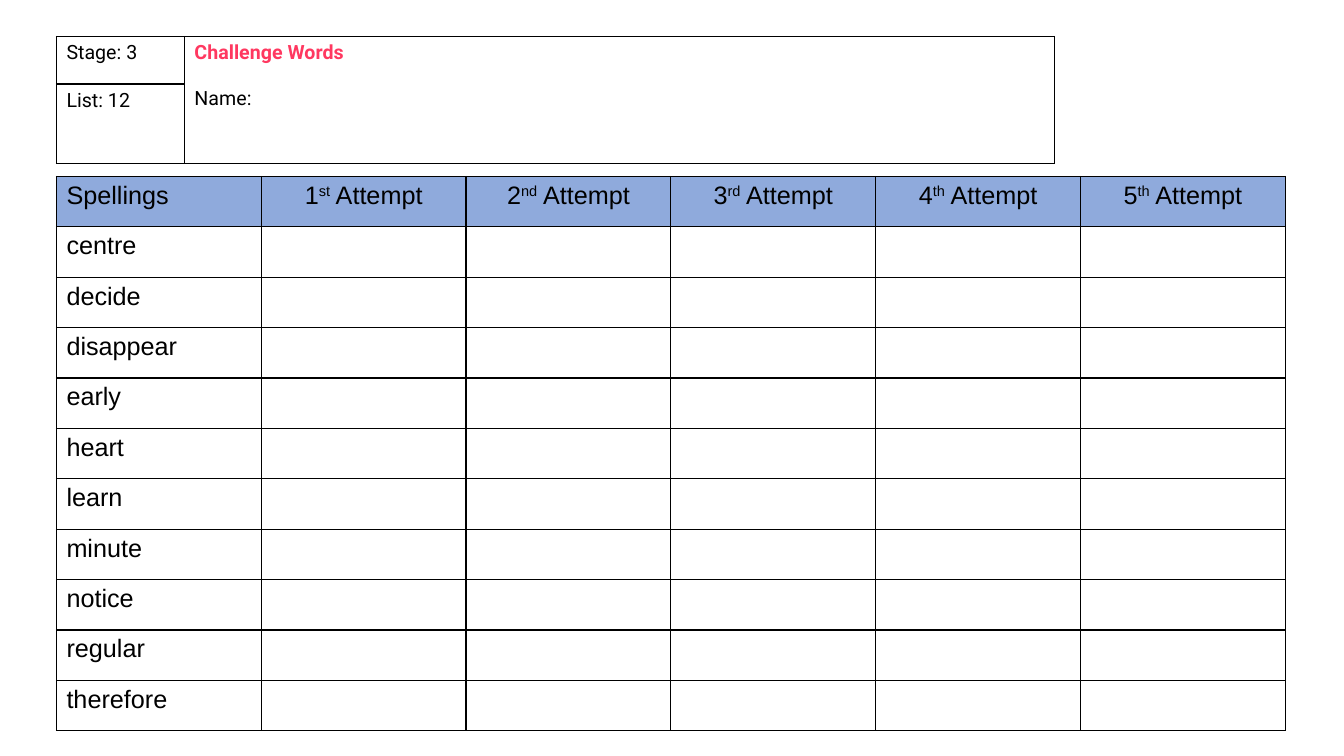
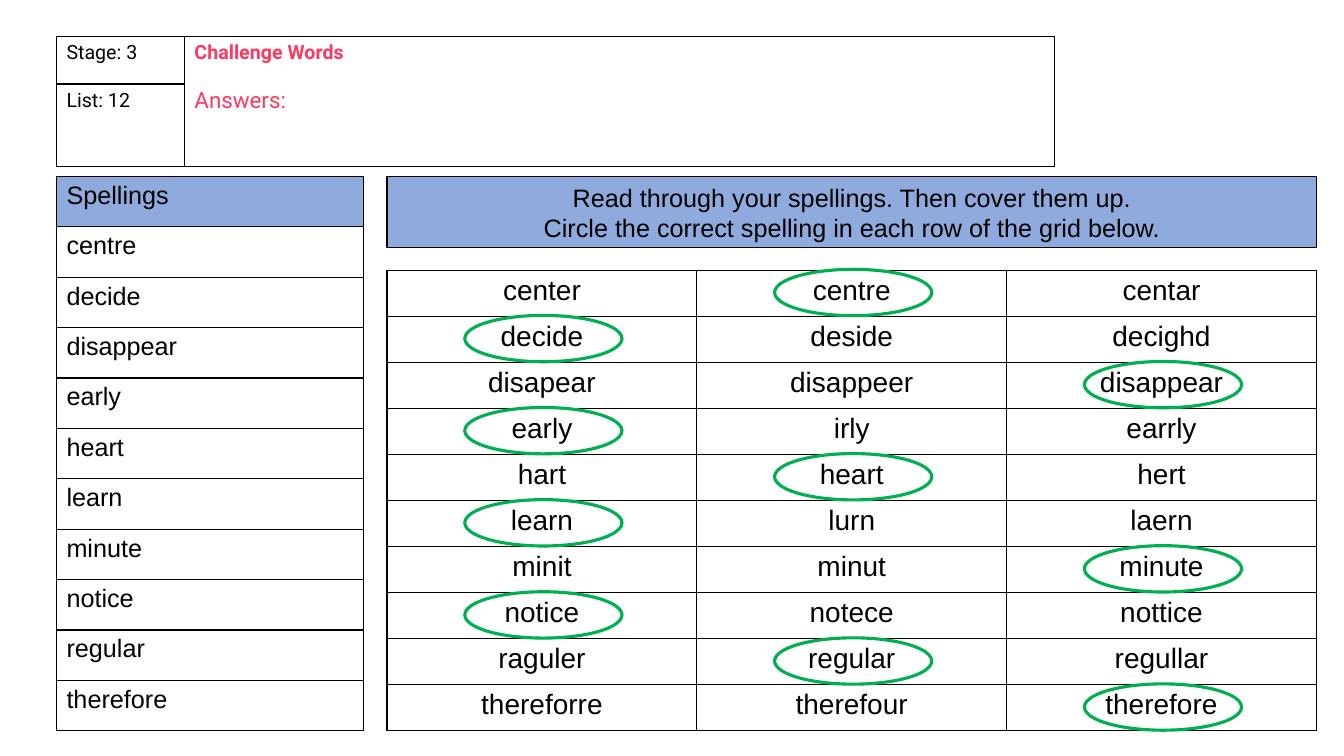
from lxml.etree import SubElement
from pptx import Presentation
from pptx.dml.color import RGBColor
from pptx.enum.shapes import MSO_SHAPE
from pptx.enum.text import MSO_ANCHOR, PP_ALIGN
from pptx.oxml.ns import qn
from pptx.util import Pt

BLACK, BLUE, PINK, GREEN = "000000", "8FAADC", "FF3860", "00B050"
LEFT, HEADER_TOP, BODY_TOP = 40.3, 26, 126
BODY_HEIGHT = 396

SPELLINGS = ["centre", "decide", "disappear", "early", "heart",
             "learn", "minute", "notice", "regular", "therefore"]
ORDINALS = ["st", "nd", "rd", "th", "th"]
CHOICES = [
    ["center", "centre", "centar"],
    ["decide", "deside", "decighd"],
    ["disapear", "disappeer", "disappear"],
    ["early", "irly", "earrly"],
    ["hart", "heart", "hert"],
    ["learn", "lurn", "laern"],
    ["minit", "minut", "minute"],
    ["notice", "notece", "nottice"],
    ["raguler", "regular", "regullar"],
    ["thereforre", "therefour", "therefore"],
]


def rgb(value):
    return RGBColor.from_string(value)


def style(p, size, font="Arial", color=BLACK, bold=False, align=PP_ALIGN.LEFT):
    p.alignment = align
    for f in [p.font] + [r.font for r in p.runs]:
        f.size, f.name, f.bold = Pt(size), font, bold
        f.color.rgb = rgb(color)


def set_borders(cell):
    tcPr = cell._tc.get_or_add_tcPr()
    for side in ("lnL", "lnR", "lnT", "lnB"):
        ln = SubElement(tcPr, qn(f"a:{side}"), w=str(Pt(1)))
        fill = SubElement(ln, qn("a:solidFill"))
        SubElement(fill, qn("a:srgbClr"), val=BLACK)


def add_grid(slide, left, top, widths, heights):
    """Add an unfilled table with thin black borders."""
    table = slide.shapes.add_table(
        len(heights), len(widths), Pt(left), Pt(top),
        Pt(sum(widths)), Pt(sum(heights))).table
    table.first_row = table.horz_banding = False
    for col, width in zip(table.columns, widths):
        col.width = Pt(width)
    for row, height in zip(table.rows, heights):
        row.height = Pt(height)
    for cell in table.iter_cells():
        set_borders(cell)
        cell.fill.background()
        style(cell.text_frame.paragraphs[0], 18)
    return table


def fill_cell(cell, text, size, **options):
    cell.text_frame.text = text
    style(cell.text_frame.paragraphs[0], size, **options)


def add_shape(slide, kind, left, top, width, height, line, weight, fill=None):
    s = slide.shapes.add_shape(kind, Pt(left), Pt(top), Pt(width), Pt(height))
    s.shadow.inherit = False
    if fill:
        s.fill.solid()
        s.fill.fore_color.rgb = rgb(fill)
    else:
        s.fill.background()
    s.line.color.rgb = rgb(line)
    s.line.width = Pt(weight)
    return s


def add_header(slide, left, top, label, label_size, label_color):
    table = add_grid(slide, left, top, [91.4, 621.4], [34, 34])
    title = table.cell(0, 1)
    title.merge(table.cell(1, 1))
    fill_cell(table.cell(0, 0), "Stage: 3", 14, font="Roboto")
    fill_cell(table.cell(1, 0), "List: 12", 14, font="Roboto")
    fill_cell(title, "Challenge Words", 14, font="Roboto", color=PINK, bold=True)
    p = title.text_frame.add_paragraph()
    p.text = label
    p.space_before = Pt(16.4)
    style(p, label_size, "Roboto", label_color)


def add_spellings(slide, left, top, width, height, attempts=()):
    """Add the word list, with an empty column for each attempt."""
    cols, rows = len(attempts) + 1, len(SPELLINGS) + 1
    table = add_grid(slide, left, top, [width / cols] * cols, [height / rows] * rows)
    for row, word in enumerate(["Spellings"] + SPELLINGS):
        fill_cell(table.cell(row, 0), word, 18)
    for number, suffix in enumerate(attempts, 1):
        p = table.cell(0, number).text_frame.paragraphs[0]
        for text in (str(number), suffix, " Attempt"):
            p.add_run().text = text
        style(p, 18, align=PP_ALIGN.CENTER)
        p.runs[1]._r.get_or_add_rPr().set("baseline", "30000")
    for col in range(cols):
        fill = table.cell(0, col).fill
        fill.solid()
        fill.fore_color.rgb = rgb(BLUE)


def add_banner(slide, left, top, width, height):
    s = add_shape(slide, MSO_SHAPE.RECTANGLE, left, top, width, height, BLACK, 1, BLUE)
    tf = s.text_frame
    tf.word_wrap = True
    tf.vertical_anchor = MSO_ANCHOR.MIDDLE
    tf.text = ("Read through your spellings. Then cover them up.\n"
               "Circle the correct spelling in each row of the grid below.")
    for p in tf.paragraphs:
        style(p, 18, align=PP_ALIGN.CENTER)


def add_choices(slide, left, top, width, height):
    """Add the grid of choices and circle each correct spelling."""
    cols, rows = len(CHOICES[0]), len(CHOICES)
    col_w, row_h = width / cols, height / rows
    ring_w, ring_h = 112.3, 33.1
    table = add_grid(slide, left, top, [col_w] * cols, [row_h] * rows)
    for row, words in enumerate(CHOICES):
        for col, word in enumerate(words):
            fill_cell(table.cell(row, col), word, 20, align=PP_ALIGN.CENTER)
        answer = words.index(SPELLINGS[row])
        add_shape(slide, MSO_SHAPE.OVAL,
                  left + (answer + 0.5) * col_w - ring_w / 2 + 1,
                  top + (row + 0.5) * row_h - ring_h / 2 - 0.5,
                  ring_w, ring_h, GREEN, 2.25)


def build_attempts(slide):
    add_spellings(slide, LEFT, BODY_TOP, 877.8, BODY_HEIGHT, ORDINALS)
    add_header(slide, LEFT, HEADER_TOP, "Name:", 14, BLACK)


def build_answers(slide):
    add_header(slide, LEFT, HEADER_TOP, "Answers:", 16, PINK)
    add_banner(slide, 276.5, BODY_TOP, 663.9, 51)
    add_spellings(slide, LEFT, BODY_TOP, 219.6, BODY_HEIGHT)
    add_choices(slide, 276.5, 193, 663.9, 329)


def main():
    prs = Presentation()
    prs.slide_width, prs.slide_height = Pt(960), Pt(540)
    for build in (build_attempts, build_answers):
        build(prs.slides.add_slide(prs.slide_layouts[6]))
    prs.save("out.pptx")


if __name__ == "__main__":
    main()
